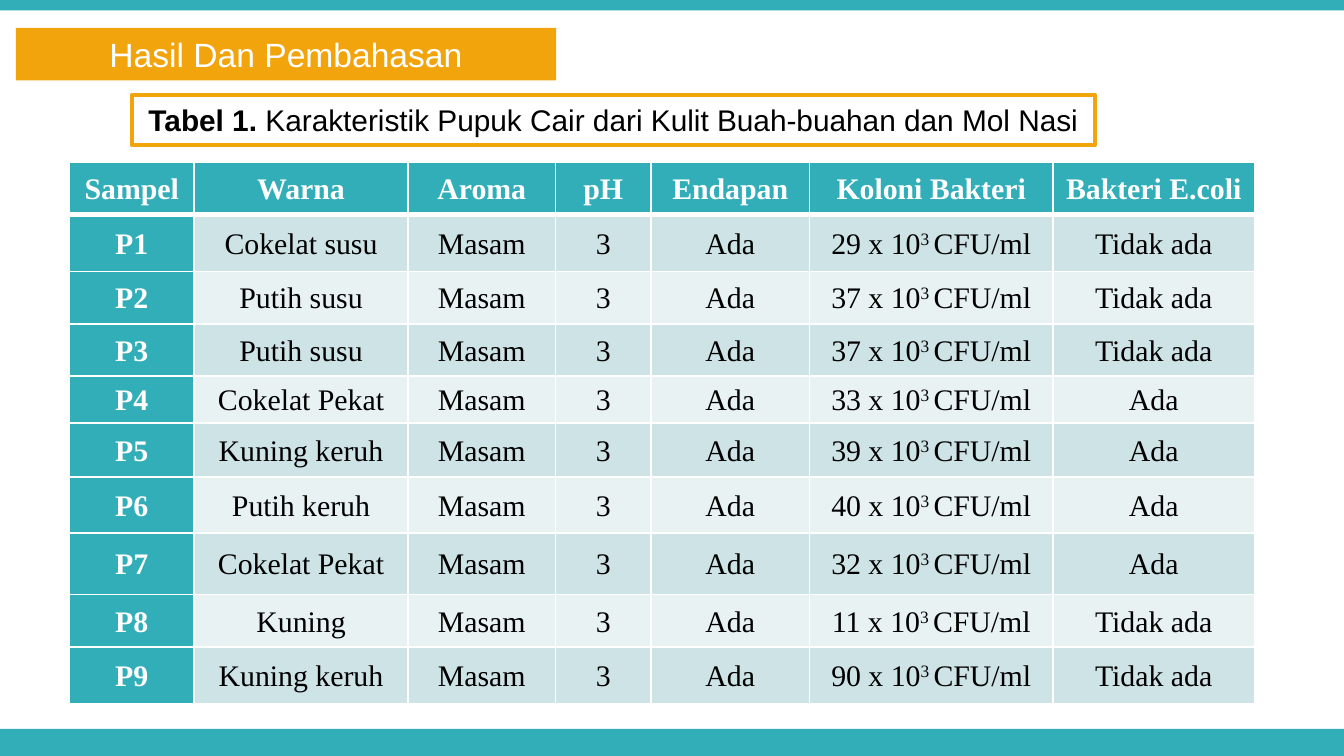
from lxml import etree
from pptx import Presentation
from pptx import util as u
from pptx.dml.color import RGBColor
from pptx.enum import shapes, text
from pptx.oxml.ns import qn

TEAL, ORANGE, WHITE, BLACK = "32AEB8", "F2A40D", "FFFFFF", "000000"
BANDS = ("CEE3E6", "E8F2F3")

HEADINGS = ["Sampel", "Warna", "Aroma", "pH", "Endapan", "Koloni Bakteri", "Bakteri E.coli"]
SAMPLES = [
    ("Cokelat susu", 29, "Tidak ada"),
    ("Putih susu", 37, "Tidak ada"),
    ("Putih susu", 37, "Tidak ada"),
    ("Cokelat Pekat", 33, "Ada"),
    ("Kuning keruh", 39, "Ada"),
    ("Putih keruh", 40, "Ada"),
    ("Cokelat Pekat", 32, "Ada"),
    ("Kuning", 11, "Tidak ada"),
    ("Kuning keruh", 90, "Tidak ada"),
]
COLUMN_WIDTHS = [2.36, 4.04, 2.79, 1.8, 3, 4.6, 3.81]
ROW_HEIGHTS = [0.99, 1.07, 0.99, 0.99, 0.89, 1.02, 1.05, 1.17, 0.99, 1.07]


def color(hex_code):
    return RGBColor.from_string(hex_code)


def add_text(paragraph, content, font="Arial", size=16, fill=BLACK, bold=False, raised=False):
    run = paragraph.add_run()
    run.text = content
    run.font.name = font
    run.font.size = u.Pt(size)
    run.font.bold = bold
    run.font.color.rgb = color(fill)
    if raised:
        run._r.get_or_add_rPr().set("baseline", "30000")


class ResultSlide:
    table_font = "Times New Roman"

    def __init__(self, deck):
        self.slide = deck.slides.add_slide(deck.slide_layouts[6])

    def box(self, left, top, width, height, fill, border=None):
        shape = self.slide.shapes.add_shape(
            shapes.MSO_SHAPE.RECTANGLE, u.Cm(left), u.Cm(top), u.Cm(width), u.Cm(height))
        shape.shadow.inherit = False
        shape.fill.solid()
        shape.fill.fore_color.rgb = color(fill)
        if border:
            shape.line.color.rgb = color(border)
            shape.line.width = u.Pt(2)
        else:
            shape.line.fill.background()
        return shape

    def label(self, shape, parts, anchor=text.MSO_ANCHOR.MIDDLE, **style):
        frame = shape.text_frame
        frame.vertical_anchor = anchor
        paragraph = frame.paragraphs[0]
        paragraph.alignment = text.PP_ALIGN.CENTER
        for content, extra in parts:
            add_text(paragraph, content, **style, **extra)

    def borders(self, cell, **widths):
        properties = cell._tc.get_or_add_tcPr()
        for side in "LRTB":
            width = u.Pt(widths.get(side, 1))
            line = etree.SubElement(properties, qn(f"a:ln{side}"), w=str(width))
            paint = etree.SubElement(line, qn("a:solidFill"))
            etree.SubElement(paint, qn("a:srgbClr"), val=WHITE)

    def cell(self, cell, parts, fill, header, margin, **widths):
        self.borders(cell, **widths)
        cell.fill.solid()
        cell.fill.fore_color.rgb = color(fill)
        cell.margin_left = cell.margin_right = u.Cm(margin)
        cell.margin_top = cell.margin_bottom = 0
        cell.vertical_anchor = text.MSO_ANCHOR.MIDDLE
        paragraph = cell.text_frame.paragraphs[0]
        paragraph.alignment = text.PP_ALIGN.CENTER
        paragraph.line_spacing = 1.07
        for content, extra in parts:
            add_text(paragraph, content, font=self.table_font, bold=header,
                     fill=WHITE if header else BLACK, **extra)

    def table(self, left, top, rows):
        grid = self.slide.shapes.add_table(
            len(rows), len(COLUMN_WIDTHS), u.Cm(left), u.Cm(top),
            u.Cm(sum(COLUMN_WIDTHS)), u.Cm(sum(ROW_HEIGHTS))).table
        for column, width in zip(grid.columns, COLUMN_WIDTHS):
            column.width = u.Cm(width)
        for r, (values, height) in enumerate(zip(rows, ROW_HEIGHTS)):
            grid.rows[r].height = u.Cm(height)
            edge = {0: {"B": 3}, 1: {"T": 3}}.get(r, {})
            for c, value in enumerate(values):
                header = r == 0 or c == 0
                fill = TEAL if header else BANDS[(r - 1) % 2]
                parts = [(value, {})] if isinstance(value, str) else value
                margin = 0.15 if isinstance(value, str) else 0.18
                self.cell(grid.cell(r, c), parts, fill, header, margin, **edge)


def colony_count(count):
    return [(f"{count} x 10", {}), ("3 ", {"raised": True}), ("CFU/ml", {})]


def main():
    deck = Presentation()
    deck.slide_width, deck.slide_height = u.Cm(25.4), u.Cm(14.29)
    page = ResultSlide(deck)

    page.box(0, 13.78, 25.4, 0.51, TEAL)
    page.box(0, 0, 25.4, 0.2, TEAL)

    caption = page.box(2.49, 1.8, 18.21, 0.94, WHITE, border=ORANGE)
    page.label(caption, [
        ("Tabel 1. ", {"bold": True}),
        ("Karakteristik Pupuk Cair dari Kulit Buah-buahan dan Mol Nasi", {}),
    ], anchor=text.MSO_ANCHOR.TOP)
    caption.text_frame.word_wrap = False
    caption.text_frame.auto_size = text.MSO_AUTO_SIZE.SHAPE_TO_FIT_TEXT

    rows = [HEADINGS] + [
        [f"P{number}", shade, "Masam", "3", "Ada", colony_count(count), e_coli]
        for number, (shade, count, e_coli) in enumerate(SAMPLES, 1)
    ]
    page.table(1.31, 3.07, rows)

    title = page.box(0.3, 0.53, 10.21, 0.99, ORANGE)
    page.label(title, [("Hasil Dan Pembahasan", {})], size=18, fill=WHITE)

    deck.save("out.pptx")


if __name__ == "__main__":
    main()
